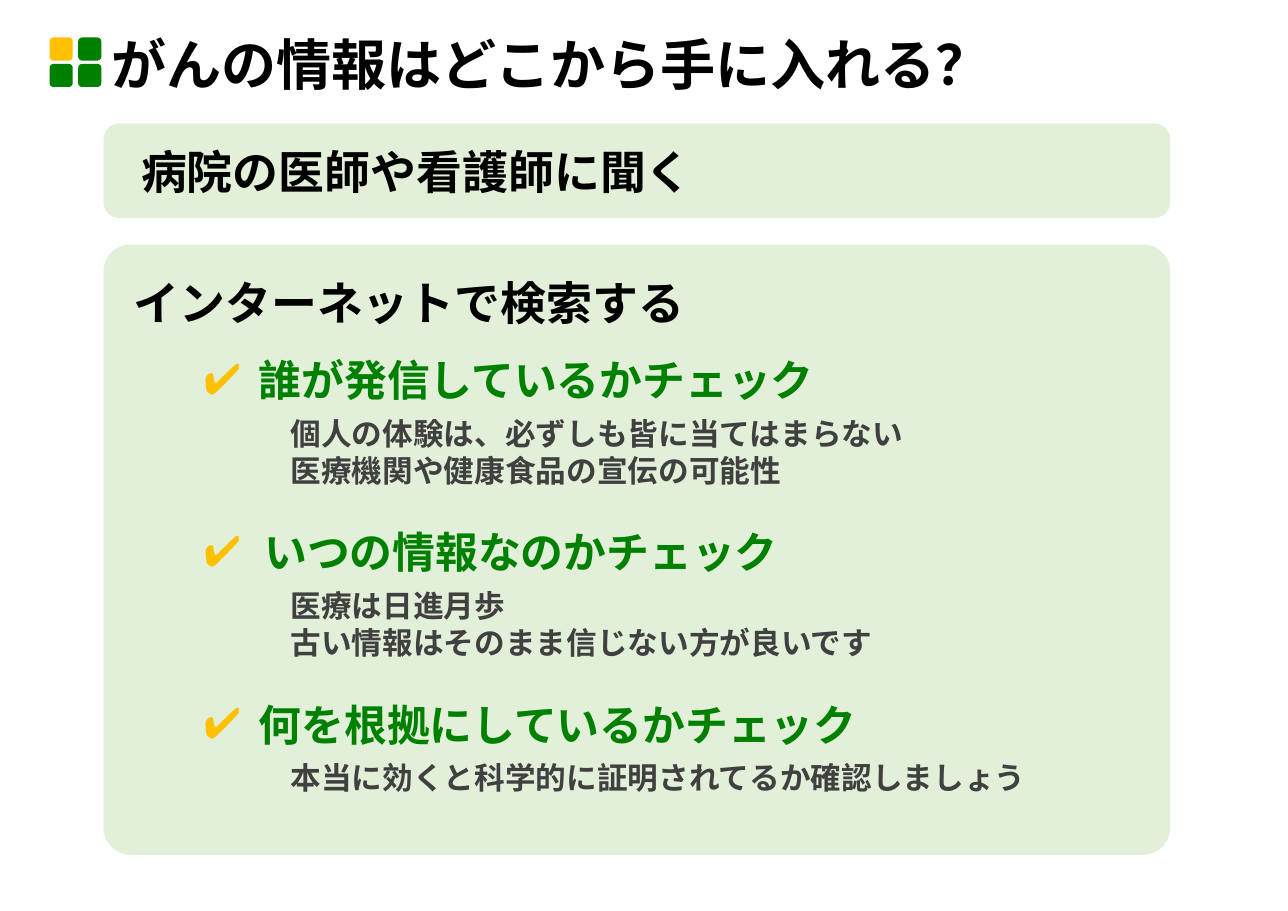
from dataclasses import dataclass

from lxml.etree import SubElement
from pptx import Presentation
from pptx.dml.color import RGBColor
from pptx.enum.shapes import MSO_SHAPE
from pptx.enum.text import MSO_ANCHOR, PP_ALIGN
from pptx.oxml.ns import qn
from pptx.util import Inches, Pt


@dataclass(frozen=True)
class Theme:
    black: str = "000000"
    grey: str = "404040"
    green: str = "008000"
    yellow: str = "FFC000"
    panel: str = "E2F0D9"
    title_font: str = "Noto Sans CJK JP"
    body_font: str = "Arial"
    title: int = 36
    heading: int = 30
    check: int = 28
    detail: int = 20
    leading: float = 1.21


class Deck:
    def __init__(self, prs, theme):
        self.theme = theme
        self.s = prs.slides.add_slide(prs.slide_layouts[6])

    def rounded(self, x, y, w, h, color, corner=None):
        sp = self.s.shapes.add_shape(
            MSO_SHAPE.ROUNDED_RECTANGLE, Inches(x), Inches(y), Inches(w), Inches(h))
        sp.shadow.inherit = False
        sp.fill.solid()
        sp.fill.fore_color.rgb = RGBColor.from_string(color)
        sp.line.fill.background()
        if corner is not None:
            sp.adjustments[0] = corner
        return sp

    def textbox(self, x, y, w, h):
        tf = self.s.shapes.add_textbox(
            Inches(x), Inches(y), Inches(w), Inches(h)).text_frame
        tf.word_wrap = True
        return tf

    def paragraph(self, p, text, size, color, font=None, margin=0, hanging=0):
        font = font or self.theme.body_font
        p.text = text
        p.alignment = PP_ALIGN.LEFT
        p.line_spacing = Pt(round(size * self.theme.leading, 1))
        pPr = p._p.get_or_add_pPr()
        pPr.set("marL", str(Inches(margin)))
        pPr.set("indent", str(-Inches(hanging)))
        for r in p.runs:
            r.font.size = Pt(size)
            r.font.bold = True
            r.font.name = font
            r.font.color.rgb = RGBColor.from_string(color)
            SubElement(r._r.get_or_add_rPr(), qn("a:ea"), typeface=font)

    def bullet(self, p, char, color):
        pPr = p._p.get_or_add_pPr()
        SubElement(SubElement(pPr, qn("a:buClr")), qn("a:srgbClr"), val=color)
        SubElement(pPr, qn("a:buFont"), typeface=self.theme.body_font)
        SubElement(pPr, qn("a:buChar"), char=char)

    def title(self, text):
        t = self.theme
        tf = self.textbox(0.91, 0.27, 9.92, 0.68)
        tf.vertical_anchor = MSO_ANCHOR.MIDDLE
        p = tf.paragraphs[0]
        self.paragraph(p, text, t.title, t.black, t.title_font)
        p.line_spacing = 0.9

    def panel(self, y, h, text, corner=None):
        t = self.theme
        sp = self.rounded(0.94, y, 9.68, h, t.panel, corner)
        tf = sp.text_frame
        tf.vertical_anchor = MSO_ANCHOR.MIDDLE
        self.paragraph(tf.paragraphs[0], text, t.heading, t.black, margin=0.2)
        return tf

    def checklist(self, items):
        t = self.theme
        tf = self.textbox(1.75, 3.16, 8.42, 4.12)
        for i, (check, margin, details) in enumerate(items):
            p = tf.add_paragraph() if i else tf.paragraphs[0]
            self.paragraph(p, check, t.check, t.green, margin=margin, hanging=margin)
            p.space_before = Pt(round(t.detail * t.leading, 1) if i else 0)
            p.space_after = Pt(6)
            self.bullet(p, "✔", t.yellow)
            for detail in details:
                self.paragraph(tf.add_paragraph(), detail, t.detail, t.grey, margin=0.79)


def main():
    prs = Presentation()
    prs.slide_width, prs.slide_height = Inches(11.69), Inches(8.27)
    theme = Theme()
    deck = Deck(prs, theme)

    search = deck.panel(2.22, 5.54, "インターネットで検索する", 0.044)
    search.vertical_anchor = MSO_ANCHOR.TOP
    search.margin_left, search.margin_top = Inches(0), Inches(0.2)

    deck.checklist([
        ("誰が発信しているかチェック", 0.5,
         ["個人の体験は、必ずしも皆に当てはまらない", "医療機関や健康食品の宣伝の可能性"]),
        ("いつの情報なのかチェック", 0.55,
         ["医療は日進月歩", "古い情報はそのまま信じない方が良いです"]),
        ("何を根拠にしているかチェック", 0.5,
         ["本当に効くと科学的に証明されてるか確認しましょう"]),
    ])

    for row in range(2):
        for col in range(2):
            color = theme.green if row or col else theme.yellow
            deck.rounded(0.45 + 0.26 * col, 0.34 + 0.24 * row, 0.21, 0.21, color)

    deck.title("がんの情報はどこから手に入れる？")
    deck.panel(1.12, 0.86, "病院の医師や看護師に聞く")
    prs.save("out.pptx")


if __name__ == "__main__":
    main()
